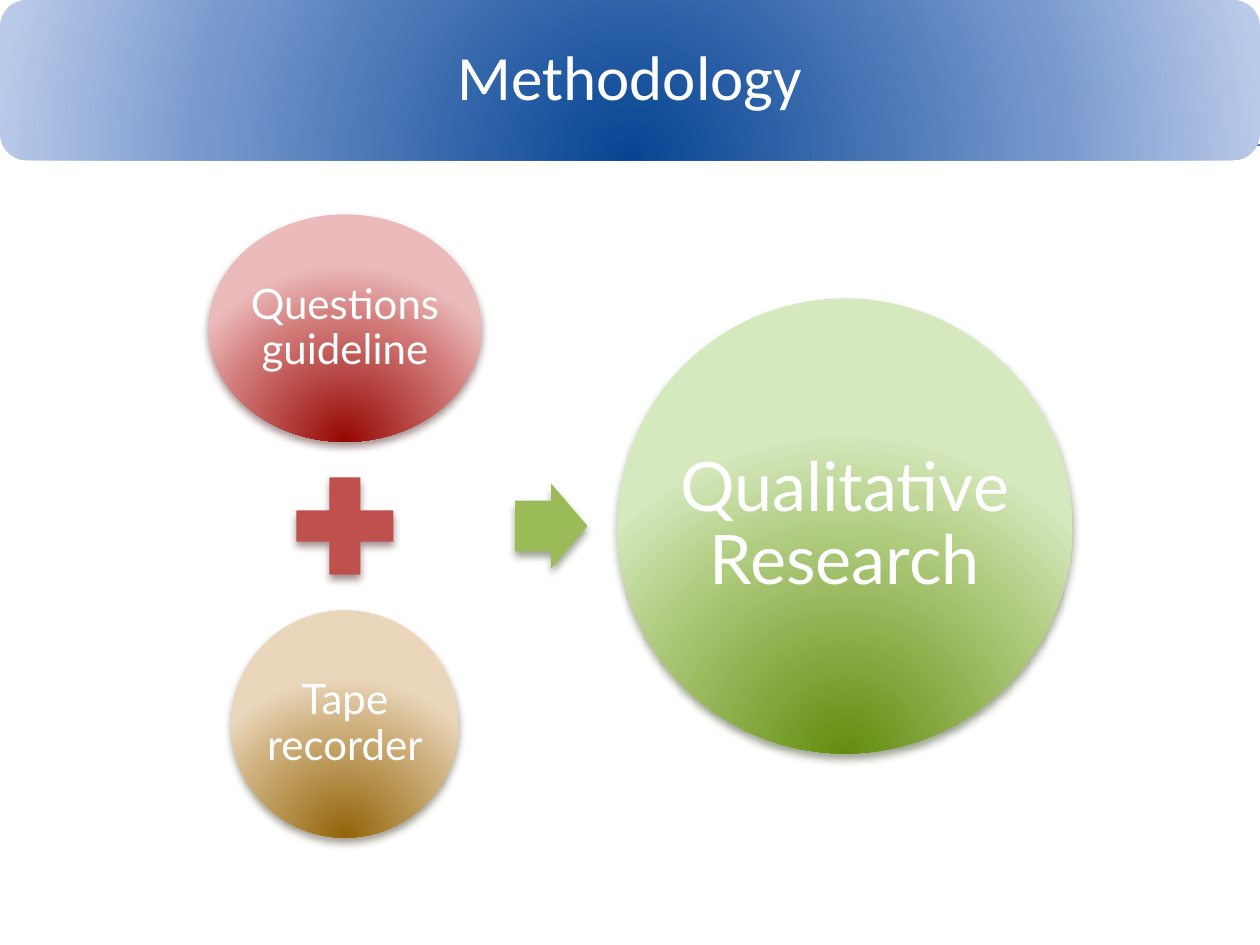
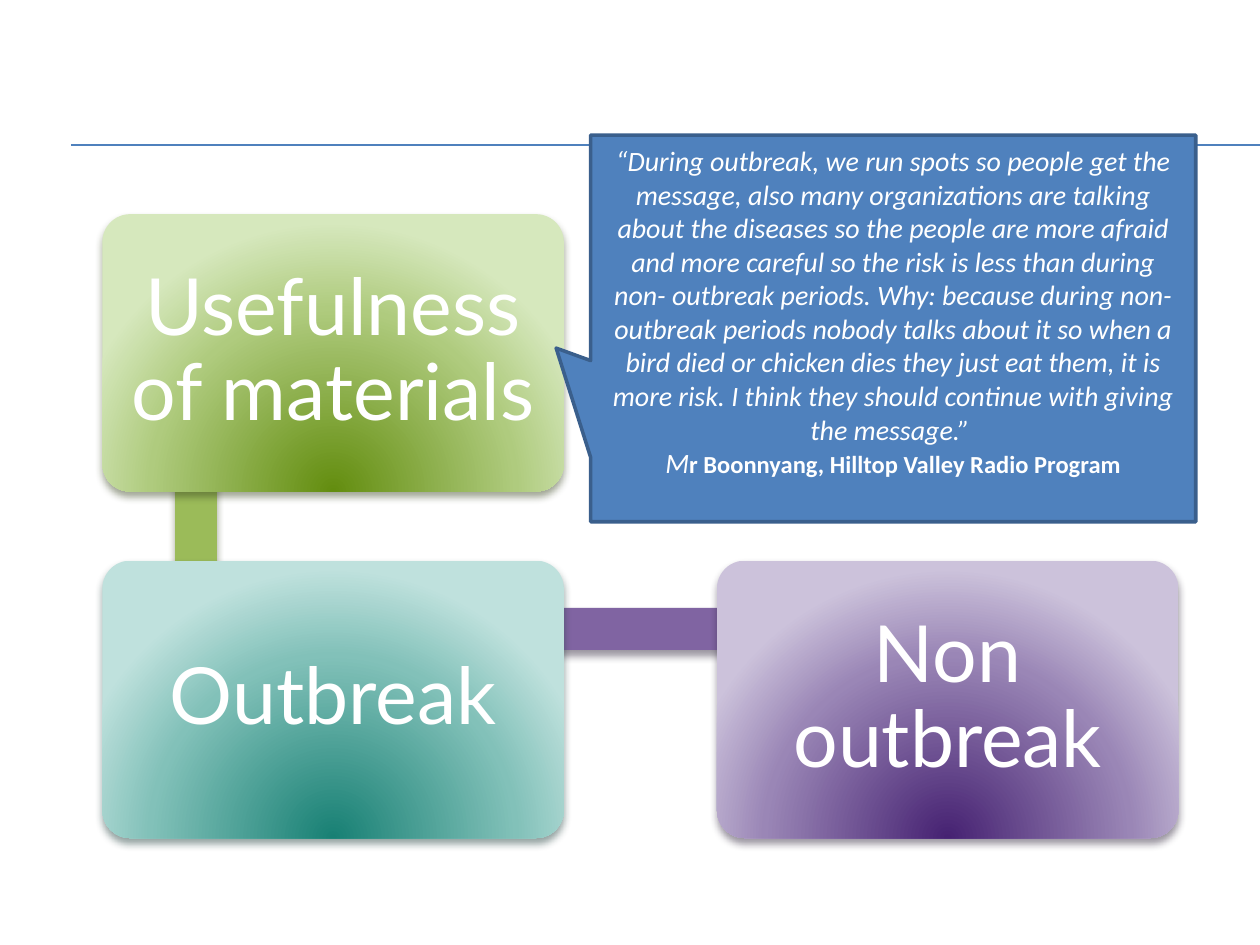
import dataclasses

import lxml.etree
import pptx
import pptx.dml.color
import pptx.enum.shapes
import pptx.enum.text
import pptx.oxml.ns
import pptx.util

Pt = pptx.util.Pt
RGB = pptx.dml.color.RGBColor.from_string
qn = pptx.oxml.ns.qn
SHAPE = pptx.enum.shapes.MSO_SHAPE


@dataclasses.dataclass(frozen=True)
class Glow:
    core: str
    middle: str
    edge: str
    shadow: str = ""


@dataclasses.dataclass(frozen=True)
class Theme:
    blue: Glow = Glow("064493", "799ACE", "BACAE9")
    red: Glow = Glow("960703", "D07977", "EBBABA", "441B1A")
    tan: Glow = Glow("926409", "CEAF7B", "E9D6BB", "43371C")
    green: Glow = Glow("638D0F", "AFCB7E", "D6E8BD", "37421E")
    teal: Glow = Glow("188074", "82C1B9", "BFE1DD", "203E3B")
    purple: Glow = Glow("462272", "9A86B6", "CCC2DB", "2D2339")
    flat_red: str = "C0504D"
    flat_green: str = "9BBB59"
    flat_purple: str = "8064A2"
    flat_blue: str = "4F81BD"
    callout_line: str = "3A5F8C"
    text: str = "FFFFFF"
    body_font: str = "Lato"
    title_font: str = "Calibri"
    title_size: int = 36
    input_size: int = 24
    result_size: int = 39
    card_size: int = 45
    quote_size: int = 16
    speaker_size: int = 14


THEME = Theme()
SLIDE_W, SLIDE_H = 720, 540


def add_xml(parent, tag, **attrs):
    return lxml.etree.SubElement(parent, qn(tag), {k: str(v) for k, v in attrs.items()})


def add_shadow(sp, color):
    effects = sp._element.spPr.find(qn("a:effectLst"))
    shadow = add_xml(effects, "a:outerShdw", blurRad=Pt(4.5), dist=Pt(3),
                     dir=5400000, rotWithShape=0)
    add_xml(add_xml(shadow, "a:srgbClr", val=color), "a:alpha", val=48000)


def fill_glow(sp, glow):
    sp.fill.gradient()
    grad = sp._element.spPr.find(qn("a:gradFill"))
    for child in list(grad):
        grad.remove(child)
    stops = add_xml(grad, "a:gsLst")
    for percent, color in ((0, glow.core), (68, glow.middle), (100, glow.edge)):
        add_xml(add_xml(stops, "a:gs", pos=percent * 1000), "a:srgbClr", val=color)
    path = add_xml(grad, "a:path", path="circle")
    add_xml(path, "a:fillToRect", l=50000, t=130000, r=50000, b=-30000)


def add_block(slide, kind, box, fill, shadow="", adjustments=()):
    sp = slide.shapes.add_shape(kind, *map(Pt, box))
    for i, value in enumerate(adjustments):
        sp.adjustments[i] = value
    if isinstance(fill, Glow):
        fill_glow(sp, fill)
        shadow = fill.shadow
    else:
        sp.fill.solid()
        sp.fill.fore_color.rgb = RGB(fill)
    sp.line.fill.background()
    sp.shadow.inherit = False
    if shadow:
        add_shadow(sp, shadow)
    return sp


def set_frame(sp, inset):
    tf = sp.text_frame
    tf.word_wrap = True
    tf.vertical_anchor = pptx.enum.text.MSO_ANCHOR.MIDDLE
    tf.margin_left = tf.margin_right = tf.margin_top = tf.margin_bottom = Pt(inset)
    return tf


def style_paragraph(p, size, font):
    p.alignment = pptx.enum.text.PP_ALIGN.CENTER
    p.font.size = Pt(size)
    p.font.name = font
    p.font.color.rgb = RGB(THEME.text)


def add_label(sp, text, size, inset, font=THEME.body_font):
    p = set_frame(sp, inset).paragraphs[0]
    p.text = text
    p.line_spacing = 0.9
    style_paragraph(p, size, font)


def centred(cx, cy, w, h):
    return cx - w / 2, cy - h / 2, w, h


def add_circle(slide, text, box, glow, size):
    add_block(slide, SHAPE.OVAL, box, glow)
    add_label(slide.shapes.add_textbox(*map(Pt, box)), text, size, 3)


def add_card(slide, text, box, glow):
    sp = add_block(slide, SHAPE.ROUNDED_RECTANGLE, box, glow, adjustments=(0.1,))
    add_label(sp, text, THEME.card_size, 8)


def add_title(slide, text):
    sp = add_block(slide, SHAPE.ROUNDED_RECTANGLE, (0, 0, SLIDE_W, 91.5), THEME.blue)
    add_label(sp, text, THEME.title_size, 8, THEME.title_font)


def add_callout(slide, box, quote, initial, speaker):
    sp = add_block(slide, SHAPE.RECTANGULAR_CALLOUT, box, THEME.flat_blue,
                   adjustments=(-0.557, 0.051))
    sp.line.color.rgb = RGB(THEME.callout_line)
    sp.line.width = Pt(2)
    tf = set_frame(sp, 7.2)
    tf.margin_top, tf.margin_bottom = Pt(3.6), Pt(23)
    p = tf.paragraphs[0]
    p.text = quote
    style_paragraph(p, THEME.quote_size, THEME.title_font)
    p.font.italic = True
    p = tf.add_paragraph()
    style_paragraph(p, THEME.quote_size, THEME.title_font)
    r = p.add_run()
    r.text = initial
    r.font.italic = True
    r = p.add_run()
    r.text = speaker
    r.font.size = Pt(THEME.speaker_size)
    r.font.bold = True


def add_ruled_slide(prs):
    slide = prs.slides.add_slide(prs.slide_layouts[6])
    for y in (82.8, 83.2):
        line = slide.shapes.add_connector(
            pptx.enum.shapes.MSO_CONNECTOR.STRAIGHT, Pt(40.5), Pt(y), Pt(SLIDE_W), Pt(y))
        line.line.color.rgb = RGB(THEME.flat_blue)
        line.line.width = Pt(0.75)
        add_xml(line._element.spPr, "a:effectLst")
    return slide


def build_methodology(prs):
    slide = add_ruled_slide(prs)
    input_x, result_x, mid_y, step = 197.1, 482.8, 300.6, 113.1
    add_circle(slide, "Questions guideline", centred(input_x, mid_y - step, 156, 130),
               THEME.red, THEME.input_size)
    add_block(slide, SHAPE.MATH_PLUS, centred(input_x, mid_y, 75.5, 75.5),
              THEME.flat_red, THEME.red.shadow)
    add_circle(slide, "Tape recorder", centred(input_x, mid_y + step, 130, 130),
               THEME.tan, THEME.input_size)
    add_block(slide, SHAPE.RIGHT_ARROW, centred(315, mid_y, 41.4, 48.4),
              THEME.flat_green, THEME.green.shadow, (0.6, 0.5))
    add_circle(slide, "Qualitative Research", centred(result_x, mid_y, 260, 260),
               THEME.green, THEME.result_size)
    add_title(slide, "Methodology")


def build_usefulness(prs):
    slide = add_ruled_slide(prs)
    left, top, step_x, step_y = 58.5, 122.4, 351.2, 198
    card_w, card_h, bar = 263.7, 158.5, 24
    joint_x, joint_y = left + 53.5, top + 39
    add_block(slide, SHAPE.RECTANGLE, (joint_x - bar / 2, joint_y, bar, step_y),
              THEME.flat_green, THEME.green.shadow)
    add_block(slide, SHAPE.RECTANGLE, (joint_x, joint_y + step_y - bar / 2, step_x, bar),
              THEME.flat_purple, THEME.purple.shadow)
    for text, col, row, glow in (
        ("Usefulness of materials", 0, 0, THEME.green),
        ("Outbreak", 0, 1, THEME.teal),
        ("Non outbreak", 1, 1, THEME.purple),
    ):
        add_card(slide, text, (left + col * step_x, top + row * step_y, card_w, card_h), glow)
    add_callout(
        slide, (337.5, 77.2, 345.8, 221),
        "“During outbreak, we run spots so people get the message, also many "
        "organizations are talking about the diseases so the people are more afraid "
        "and more careful so the risk is less than during non- outbreak periods. "
        "Why: because during non-outbreak periods nobody talks about it so when a "
        "bird died or chicken dies they just eat them, it is more risk. I think they "
        "should continue with giving the message.” ",
        "M", "r Boonnyang, Hilltop Valley Radio Program")


def main():
    prs = pptx.Presentation()
    prs.slide_width, prs.slide_height = Pt(SLIDE_W), Pt(SLIDE_H)
    build_methodology(prs)
    build_usefulness(prs)
    prs.save("out.pptx")


if __name__ == "__main__":
    main()
